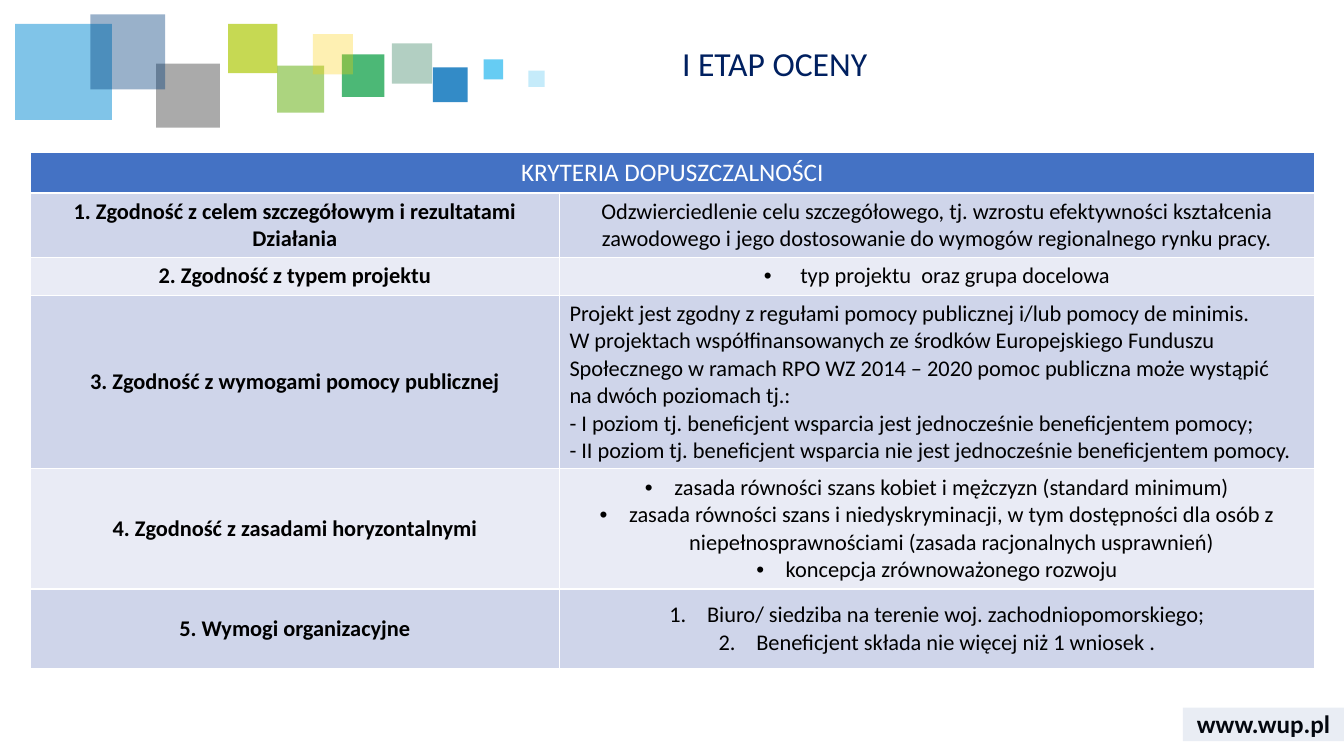
import lxml.etree
import pptx
import pptx.dml.color
import pptx.enum.shapes
import pptx.enum.text
import pptx.oxml.ns
import pptx.util

Pt = pptx.util.Pt
qn = pptx.oxml.ns.qn
ALIGN = pptx.enum.text.PP_ALIGN
ANCHOR = pptx.enum.text.MSO_ANCHOR
RECTANGLE = pptx.enum.shapes.MSO_SHAPE.RECTANGLE

THEME = {
    "font": "Calibri",
    "title": "002060",
    "text": "000000",
    "header_text": "FFFFFF",
    "header_fill": "4472C4",
    "bands": ["CFD5EA", "E9EBF5"],
    "footer_band": "2F5597",
    "title_size": 24,
    "header_size": 18,
    "body_size": 16,
    "footer_size": 18,
}


def add_run(paragraph, text, size, color, bold=False):
    run = paragraph.add_run()
    run.text = text
    run.font.name = THEME["font"]
    run.font.size = Pt(size)
    run.font.bold = bold
    run.font.color.rgb = pptx.dml.color.RGBColor.from_string(color)


def add_tinted_rectangle(left, top, width, height, color, opacity):
    rectangle = slide.shapes.add_shape(RECTANGLE, Pt(left), Pt(top), Pt(width), Pt(height))
    rectangle.shadow.inherit = False
    rectangle.line.fill.background()
    rectangle.fill.solid()
    rectangle.fill.fore_color.rgb = pptx.dml.color.RGBColor.from_string(color)
    tint = rectangle.fill._xPr.find(".//" + qn("a:srgbClr"))
    lxml.etree.SubElement(tint, qn("a:alpha"), val=str(opacity * 1000))


presentation = pptx.Presentation()
presentation.slide_width = Pt(960)
presentation.slide_height = Pt(540)
slide = presentation.slides.add_slide(presentation.slide_layouts[5])

website = slide.shapes.add_textbox(Pt(845), Pt(502), Pt(115), Pt(29))
website.text_frame.word_wrap = True
website.text_frame.vertical_anchor = ANCHOR.MIDDLE
address = website.text_frame.paragraphs[0]
address.alignment = ALIGN.CENTER
add_run(address, "www.wup.pl", THEME["footer_size"], THEME["text"], True)

mosaic = [
    (280, 31, 28.8, 28.8, "006138", 30),
    (309.3, 48.2, 24.8, 24.8, "006EB9", 80),
    (244.3, 38.9, 30.4, 30.4, "009A3C", 70),
    (10.9, 17, 69, 68.7, "028BD3", 50),
    (197.9, 46.8, 33.7, 33.7, "75B82A", 60),
    (111.5, 45.4, 45.6, 45.8, "575757", 50),
    (64.5, 10.3, 53.5, 53.5, "003D7C", 40),
    (345.5, 42.4, 14, 14.4, "40C0F1", 80),
    (162.9, 17.1, 35.2, 35.2, "AFCA0B", 70),
    (223.5, 24.4, 28.7, 28.7, "FED000", 30),
    (377.4, 50.4, 11.6, 11.6, "40C0F1", 30),
]
for left, top, width, height, color, opacity in mosaic:
    add_tinted_rectangle(left, top, width, height, color, opacity)
add_tinted_rectangle(845, 505.4, 115, 24, THEME["footer_band"], 10)

list_styles = {
    "plain": None,
    "centred": None,
    "wide bullets": (26, "a:buChar", {"char": "•"}),
    "bullets": (21, "a:buChar", {"char": "•"}),
    "numbers": (27, "a:buAutoNum", {"type": "arabicPeriod"}),
}
criteria = [
    (46, "1. Zgodność z celem szczegółowym i rezultatami Działania", "centred", [
        "Odzwierciedlenie celu szczegółowego, tj. wzrostu efektywności kształcenia "
        "zawodowego i jego dostosowanie do wymogów regionalnego rynku pracy.",
    ]),
    (27, "2. Zgodność z typem projektu", "wide bullets", [
        "typ projektu  oraz grupa docelowa",
    ]),
    (124, "3. Zgodność z wymogami pomocy publicznej", "plain", [
        "Projekt jest zgodny z regułami pomocy publicznej i/lub pomocy de minimis.\n"
        "W projektach współfinansowanych ze środków Europejskiego Funduszu "
        "Społecznego w ramach RPO WZ 2014 – 2020 pomoc publiczna może wystąpić\n"
        "na dwóch poziomach tj.:",
        "- I poziom tj. beneficjent wsparcia jest jednocześnie beneficjentem pomocy;",
        "- II poziom tj. beneficjent wsparcia nie jest jednocześnie beneficjentem pomocy.",
    ]),
    (86, "4. Zgodność z zasadami horyzontalnymi", "bullets", [
        "zasada równości szans kobiet i mężczyzn (standard minimum)",
        "zasada równości szans i niedyskryminacji, w tym dostępności dla osób "
        "z niepełnosprawnościami (zasada racjonalnych usprawnień)",
        "koncepcja zrównoważonego rozwoju",
    ]),
    (57, "5. Wymogi organizacyjne", "numbers", [
        "Biuro/ siedziba na terenie woj. zachodniopomorskiego;",
        "Beneficjent składa nie więcej niż 1 wniosek .",
    ]),
]

header_height = 28
table_height = header_height + sum(criterion[0] for criterion in criteria)
table = slide.shapes.add_table(
    len(criteria) + 1, 2, Pt(21.6), Pt(109), Pt(917.3), Pt(table_height)
).table
table.columns[0].width = Pt(378)
table.columns[1].width = Pt(539.3)
table.rows[0].height = Pt(header_height)

header = table.cell(0, 0)
header.merge(table.cell(0, 1))
header.fill.solid()
header.fill.fore_color.rgb = pptx.dml.color.RGBColor.from_string(THEME["header_fill"])
heading = header.text_frame.paragraphs[0]
heading.alignment = ALIGN.CENTER
add_run(heading, "KRYTERIA DOPUSZCZALNOŚCI", THEME["header_size"], THEME["header_text"])

for row, (height, criterion, style, requirements) in enumerate(criteria, 1):
    table.rows[row].height = Pt(height)
    band = pptx.dml.color.RGBColor.from_string(THEME["bands"][(row - 1) % 2])
    contents = [("centred", [criterion], True), (style, requirements, False)]
    for column, (list_style, entries, bold) in enumerate(contents):
        cell = table.cell(row, column)
        cell.fill.solid()
        cell.fill.fore_color.rgb = band
        cell.vertical_anchor = ANCHOR.MIDDLE
        for index, entry in enumerate(entries):
            frame = cell.text_frame
            paragraph = frame.add_paragraph() if index else frame.paragraphs[0]
            paragraph.alignment = ALIGN.LEFT if list_style == "plain" else ALIGN.CENTER
            if list_styles[list_style]:
                indent, marker, marker_settings = list_styles[list_style]
                properties = paragraph._p.get_or_add_pPr()
                properties.set("marL", str(Pt(indent)))
                properties.set("indent", str(-Pt(indent)))
                lxml.etree.SubElement(properties, qn("a:buFont"), typeface="Arial" if marker == "a:buChar" else "+mj-lt")
                lxml.etree.SubElement(properties, qn(marker), marker_settings)
            for line_number, line in enumerate(entry.split("\n")):
                if line_number:
                    paragraph.add_line_break()
                add_run(paragraph, line, THEME["body_size"], THEME["text"], bold)
            for line_break in paragraph._p.findall(qn("a:br")):
                lxml.etree.SubElement(line_break, qn("a:rPr"), sz=str(THEME["body_size"] * 100))

title = slide.shapes.title
title.left, title.top, title.width, title.height = Pt(480), Pt(30), Pt(458), Pt(40)
title.text_frame.auto_size = pptx.enum.text.MSO_AUTO_SIZE.NONE
title.text_frame.word_wrap = True
title.text_frame.vertical_anchor = ANCHOR.TOP
stage = title.text_frame.paragraphs[0]
stage.alignment = ALIGN.LEFT
stage.line_spacing = 0.9
add_run(stage, "I ETAP OCENY", THEME["title_size"], THEME["title"])

presentation.save("out.pptx")
